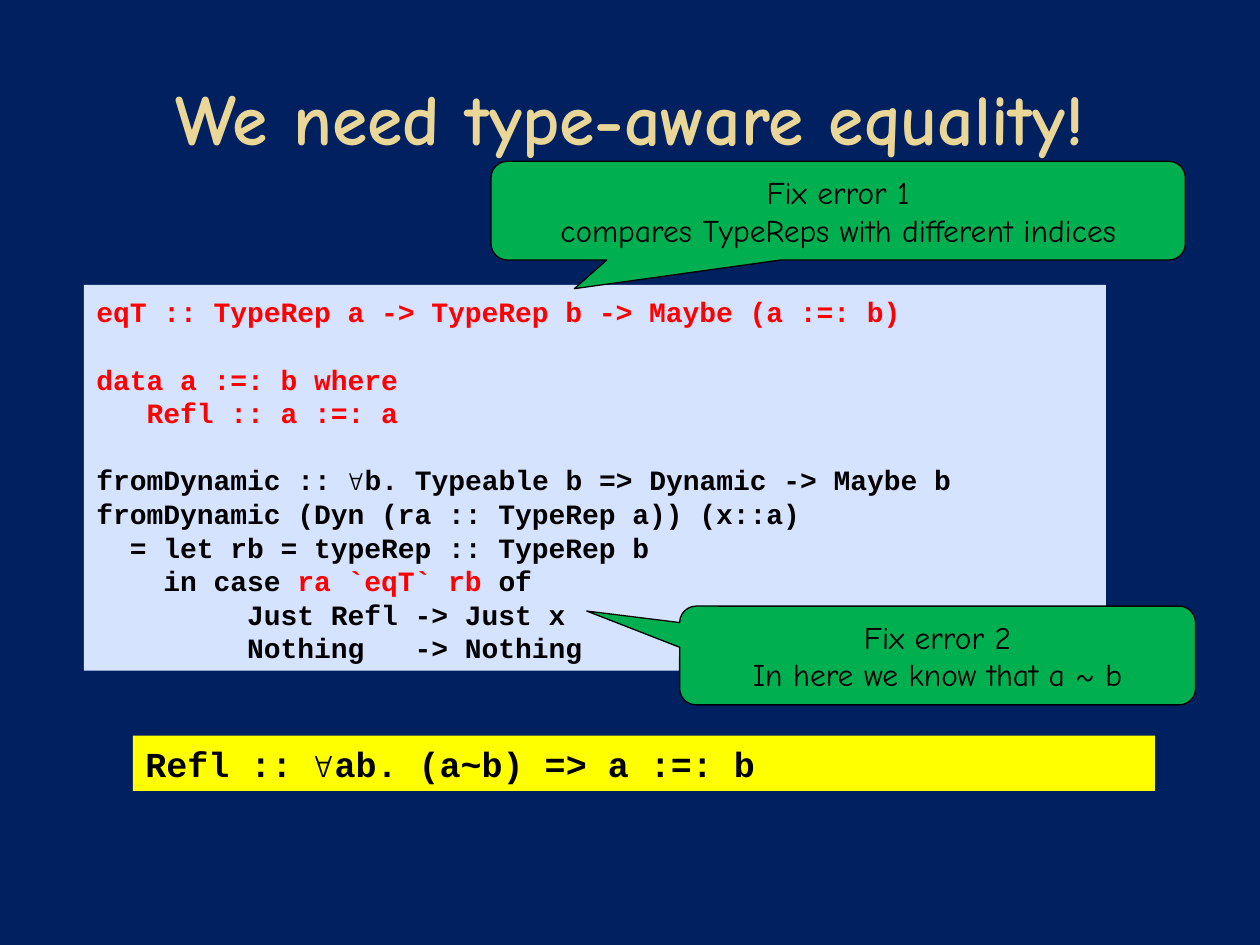
from dataclasses import dataclass

from pptx import Presentation
from pptx.dml.color import RGBColor
from pptx.enum.shapes import MSO_SHAPE as Shape
from pptx.enum.text import MSO_ANCHOR as Anchor, PP_ALIGN as Align
from pptx.util import Pt


@dataclass(frozen=True)
class Theme:
    background: str = "002060"
    title: str = "EAD696"
    code_panel: str = "D6E3FF"
    highlight: str = "FFFF00"
    callout: str = "00B050"
    ink: str = "000000"
    new_code: str = "FF0000"
    prose_font: str = "Comic Neue"
    code_font: str = "Courier New"
    title_size: int = 41
    callout_size: int = 18
    code_size: int = 16
    highlight_size: int = 20
    code_leading: float = 1.2


THEME = Theme()

# Each block is separated by a blank line; a line is a list of (text, colour, bold).
NEW, OLD = THEME.new_code, THEME.ink
CODE_BLOCKS = [
    [[("eqT :: TypeRep a -> TypeRep b -> Maybe (a :=: b)", NEW, True)]],
    [
        [("data a :=: b where", NEW, True)],
        [("   Refl :: a :=: a", NEW, True)],
    ],
    [
        [("fromDynamic :: ", OLD, True), ("∀", OLD, False),
         ("b. Typeable b => Dynamic -> Maybe b", OLD, True)],
        [("fromDynamic (Dyn (ra :: TypeRep a)) (x::a)", OLD, True)],
        [("  = let rb = typeRep :: TypeRep b", OLD, True)],
        [("    in case ", OLD, True), ("ra `eqT` rb ", NEW, True), ("of", OLD, True)],
        [("         Just Refl -> Just x", OLD, True)],
        [("         Nothing   -> Nothing", OLD, True)],
    ],
]
REFL_TYPE = [[[("Refl :: ∀ab. (a~b) => a :=: b", OLD, True)]]]


def rgb(value):
    return RGBColor.from_string(value)


def style(font, name, size, color, bold=False):
    font.name = name
    font.size = Pt(size)
    font.bold = bold
    font.color.rgb = rgb(color)


def add_title(slide, text, box):
    frame = slide.shapes.add_textbox(*map(Pt, box)).text_frame
    frame.word_wrap = True
    frame.vertical_anchor = Anchor.MIDDLE
    paragraph = frame.paragraphs[0]
    paragraph.text = text
    paragraph.alignment = Align.CENTER
    style(paragraph.font, THEME.prose_font, THEME.title_size, THEME.title, bold=True)


def add_filled_shape(slide, kind, box, fill):
    shape = slide.shapes.add_shape(kind, *map(Pt, box))
    shape.shadow.inherit = False
    shape.fill.solid()
    shape.fill.fore_color.rgb = rgb(fill)
    shape.text_frame.word_wrap = True
    return shape


def add_code(slide, blocks, box, fill, size):
    shape = add_filled_shape(slide, Shape.RECTANGLE, box, fill)
    shape.line.fill.background()
    frame = shape.text_frame
    frame.vertical_anchor = Anchor.BOTTOM
    leading = Pt(size * THEME.code_leading)
    paragraph = None
    for block_number, block in enumerate(blocks):
        for line_number, line in enumerate(block):
            paragraph = frame.add_paragraph() if paragraph else frame.paragraphs[0]
            paragraph.alignment = Align.LEFT
            paragraph.line_spacing = leading
            if block_number and not line_number:
                paragraph.space_before = leading
            paragraph.font.name = THEME.code_font
            paragraph.font.size = Pt(size)
            for text, color, bold in line:
                run = paragraph.add_run()
                run.text = text
                run.font.bold = bold
                run.font.color.rgb = rgb(color)


def add_callout(slide, paragraphs, box, tip):
    """Add a speech bubble; tip is the offset from its centre in widths and heights."""
    shape = add_filled_shape(slide, Shape.ROUNDED_RECTANGULAR_CALLOUT, box, THEME.callout)
    shape.adjustments[0], shape.adjustments[1] = tip
    shape.line.color.rgb = rgb(THEME.ink)
    shape.line.width = Pt(0.75)
    frame = shape.text_frame
    frame.vertical_anchor = Anchor.MIDDLE
    frame.text = "\n".join(paragraphs)
    for paragraph in frame.paragraphs:
        paragraph.alignment = Align.CENTER
        style(paragraph.font, THEME.prose_font, THEME.callout_size, THEME.ink)


def main():
    presentation = Presentation()
    presentation.slide_width, presentation.slide_height = Pt(720), Pt(540)
    slide = presentation.slides.add_slide(presentation.slide_layouts[6])
    slide.background.fill.solid()
    slide.background.fill.fore_color.rgb = rgb(THEME.background)

    add_title(slide, "We need type-aware equality!", (20, 21.6, 680, 90))
    add_code(slide, CODE_BLOCKS, (48, 162.8, 584, 220.4), THEME.code_panel, THEME.code_size)
    add_callout(slide, ["Fix error 2", "In here we know that a ~ b"],
                (388.4, 346.4, 294.8, 56.4), (-0.68, -0.45))
    add_callout(slide, ["Fix error 1\vcompares TypeReps with different indices"],
                (280.6, 92.2, 396.8, 56.4), (-0.38, 0.79))
    add_code(slide, REFL_TYPE, (76, 420.4, 584, 31.5), THEME.highlight, THEME.highlight_size)

    presentation.save("out.pptx")


if __name__ == "__main__":
    main()
